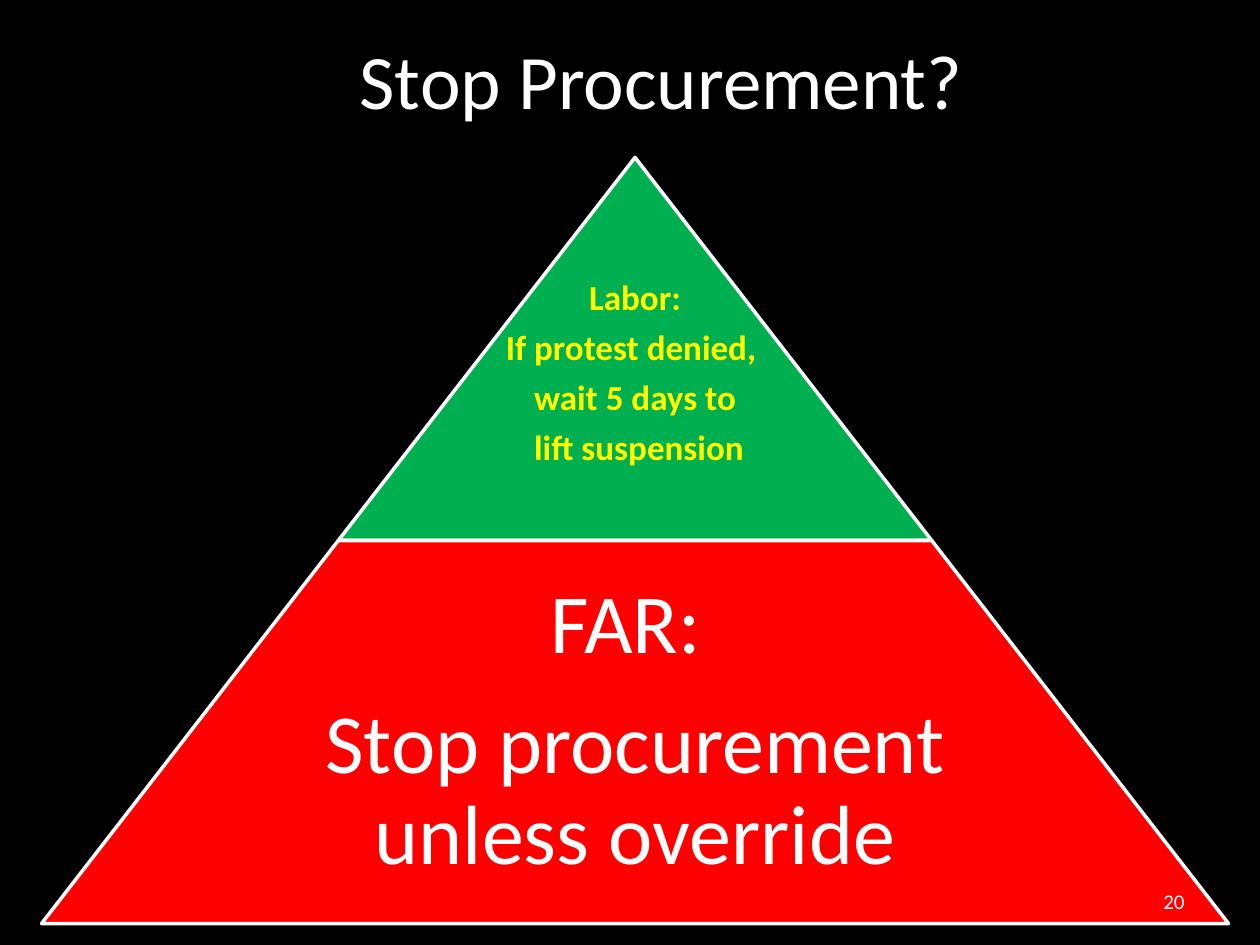
from dataclasses import dataclass

from pptx import Presentation
from pptx.dml.color import RGBColor
from pptx.enum.shapes import MSO_SHAPE as Shape
from pptx.enum.text import MSO_ANCHOR as Anchor, PP_ALIGN as Align
from pptx.slide import Slide
from pptx.util import Inches, Pt


@dataclass(frozen=True)
class Theme:
    font: str = "Calibri"
    background: str = "000000"
    text: str = "FFFFFF"
    accent: str = "FFFF00"
    labor: str = "00B050"
    far: str = "FF0000"
    outline_width: float = 2
    title_size: int = 44
    far_size: int = 48
    labor_size: int = 20
    number_size: int = 12


@dataclass(frozen=True)
class Box:
    left: float
    top: float
    width: float
    height: float

    def lengths(self) -> tuple:
        return tuple(Inches(v) for v in (self.left, self.top, self.width, self.height))


@dataclass(frozen=True)
class Label:
    box: Box
    lines: tuple[str, ...]
    size: int
    color: str = Theme.text
    bold: bool = False
    align: Align = Align.CENTER
    margins: tuple[float, float, float, float] = (0.1, 0.05, 0.1, 0.05)
    line_spacing: float = 1.0
    space_after: float = 0  # share of the type size


@dataclass(frozen=True)
class Tier:
    color: str
    box: Box
    label: Label


THEME = Theme()

# Pyramid geometry: two tiers of equal height, each side sloping alike
APEX_X, APEX_Y = 5.04, 1.25
TIER_HEIGHT, TIER_GROWTH = 3.04, 4.71
SLOPE = TIER_GROWTH / 2 / TIER_HEIGHT


def tier_box(level: int) -> Box:
    width = TIER_GROWTH * (level + 1)
    return Box(APEX_X - width / 2, APEX_Y + TIER_HEIGHT * level, width, TIER_HEIGHT)


TIER_TEXT = {"line_spacing": 0.9, "space_after": 0.35}
LABOR_BOX, FAR_BOX = tier_box(0), tier_box(1)
FAR_TEXT_WIDTH = 6.12

TIERS = (
    Tier(THEME.labor, LABOR_BOX, Label(
        LABOR_BOX,
        ("Labor:", "If protest denied, ", "wait 5 days to", " lift suspension"),
        THEME.labor_size, THEME.accent, bold=True,
        margins=(0.03, 0.43, 0.03, 0.03), **TIER_TEXT)),
    Tier(THEME.far, FAR_BOX, Label(
        Box(APEX_X - FAR_TEXT_WIDTH / 2, FAR_BOX.top, FAR_TEXT_WIDTH, TIER_HEIGHT),
        ("FAR: ", "Stop procurement unless override"),
        THEME.far_size, margins=(0.07,) * 4, **TIER_TEXT)),
)
TITLE = Label(Box(0.75, 0, 9, 1.25), ("Stop Procurement?",), THEME.title_size)
PAGE_NUMBER = Label(Box(7.17, 6.95, 2.33, 0.4), ("20",), THEME.number_size,
                    align=Align.RIGHT)


def set_format(target: object, values: dict) -> None:
    for name, value in values.items():
        setattr(target, name, value)


def draw_label(slide: Slide, label: Label) -> None:
    frame = slide.shapes.add_textbox(*label.box.lengths()).text_frame
    left, top, right, bottom = (Inches(m) for m in label.margins)
    set_format(frame, {
        "word_wrap": True, "vertical_anchor": Anchor.MIDDLE,
        "margin_left": left, "margin_top": top,
        "margin_right": right, "margin_bottom": bottom,
    })
    for index, line in enumerate(label.lines):
        paragraph = frame.add_paragraph() if index else frame.paragraphs[0]
        set_format(paragraph, {
            "alignment": label.align, "line_spacing": label.line_spacing,
            "space_after": Pt(label.size * label.space_after),
        })
        run = paragraph.add_run()
        run.text = line
        set_format(run.font, {"name": THEME.font, "size": Pt(label.size),
                              "bold": label.bold})
        run.font.color.rgb = RGBColor.from_string(label.color)


def draw_tier(slide: Slide, tier: Tier) -> None:
    band = slide.shapes.add_shape(Shape.TRAPEZOID, *tier.box.lengths())
    band.adjustments[0] = SLOPE
    band.shadow.inherit = False
    band.fill.solid()
    band.fill.fore_color.rgb = RGBColor.from_string(tier.color)
    band.line.color.rgb = RGBColor.from_string(THEME.text)
    band.line.width = Pt(THEME.outline_width)
    draw_label(slide, tier.label)


def main() -> None:
    deck = Presentation()
    deck.slide_width, deck.slide_height = Inches(10), Inches(7.5)
    slide = deck.slides.add_slide(deck.slide_layouts[6])

    # Background
    backdrop = slide.background.fill
    backdrop.solid()
    backdrop.fore_color.rgb = RGBColor.from_string(THEME.background)

    # Title, pyramid and page number
    draw_label(slide, TITLE)
    for tier in TIERS:
        draw_tier(slide, tier)
    draw_label(slide, PAGE_NUMBER)

    deck.save("out.pptx")


if __name__ == "__main__":
    main()
